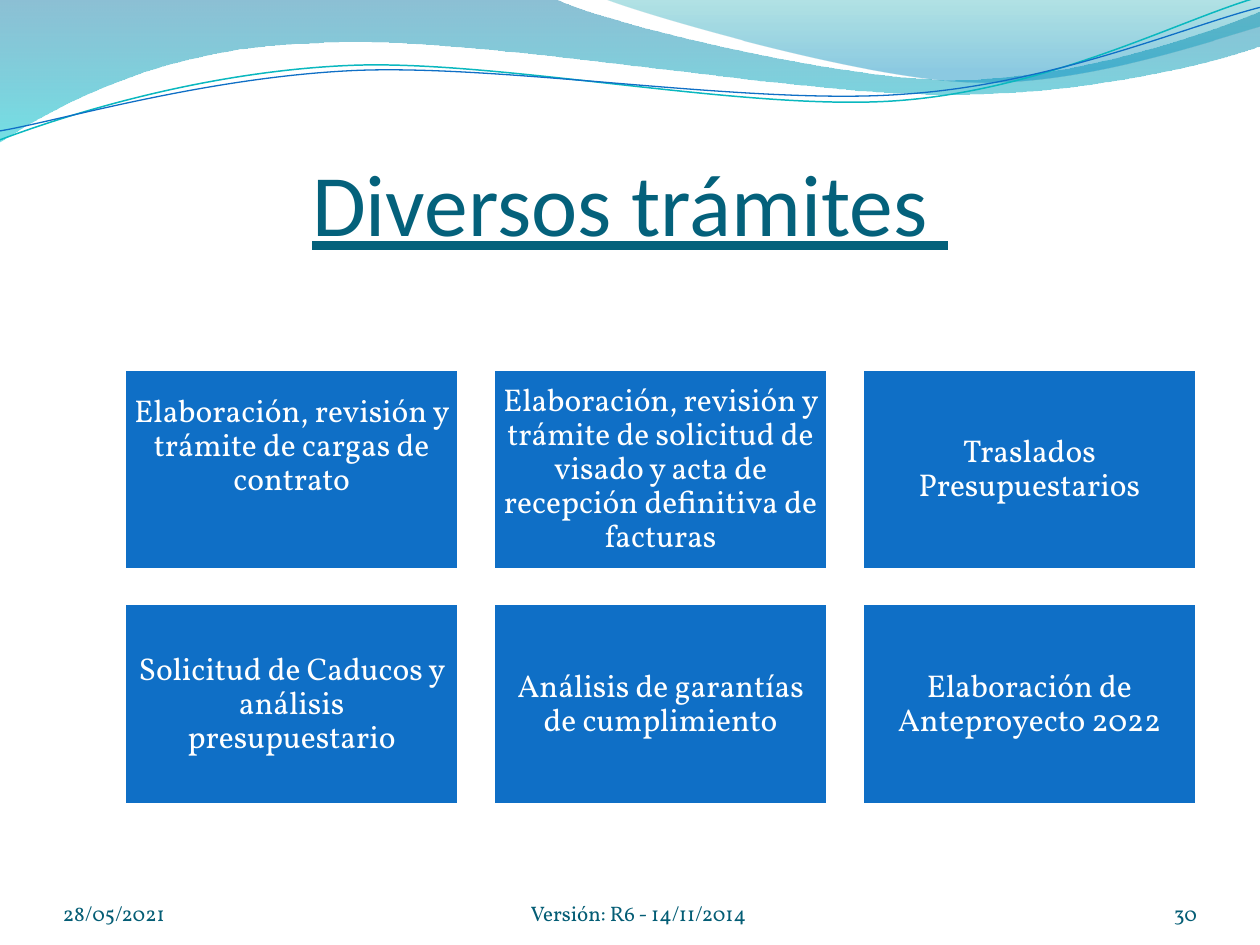
from dataclasses import dataclass

import lxml.etree
import pptx
import pptx.dml.color
import pptx.enum.shapes
import pptx.enum.text
import pptx.oxml.ns
import pptx.util

Cm, Pt, qn = pptx.util.Cm, pptx.util.Pt, pptx.oxml.ns.qn
ALIGN, ANCHOR = pptx.enum.text.PP_ALIGN, pptx.enum.text.MSO_ANCHOR


@dataclass(frozen=True)
class Theme:
    heading_font: str = "Calibri"
    body_font: str = "Vollkorn"
    title: str = "04617B"
    tile: str = "0F6FC6"
    tile_text: str = "FFFFFF"
    footer: str = "045D75"
    teal_line: str = "0AB8BF"
    # Gradient stops: position, colour, opacity in percent
    wide_wave: tuple = ((0, "0074A1", 45), (1, "00C6CF", 55))
    corner_wave: tuple = ((0, "00A1A9", 30), (0.8, "008BBF", 45))
    title_size: int = 50
    tile_size: int = 18
    footer_size: int = 12


THEME = Theme()

# Outlines in cm: pairs are points, sixes are Bézier curves
WIDE_WAVE = [
    (0, 0), (11.18, -0.03),
    (12.09, 0.43, 16.87, 1.6, 19.25, 1.6), (21.67, 1.6, 24.33, 0.66, 25.4, 0.23),
    (25.43, 0.91),
    (24.97, 1.12, 22.1, 1.93, 18.95, 1.9), (15.8, 1.9, 9.7, 0.71, 6.53, 0.86),
    (3.28, 0.91, 1.17, 2.11, -0.03, 2.87),
]
CORNER_WAVE = [
    (12.17, -0.03),
    (12.93, 0.28, 17.32, 1.57, 19.53, 1.65), (21.74, 1.75, 24.41, 0.81, 25.4, 0.53),
    (25.4, 0),
]
TEAL_CURVE = [
    (0, 2.82), (1.22, 2.36, 4.01, 1.45, 7.04, 1.32),
    (10.03, 1.19, 15.06, 2.26, 18.11, 2.03), (21.16, 1.8, 23.83, 0.38, 25.35, -0.05),
]
BLUE_CURVE = [
    (0, 2.64), (1.19, 2.44, 4.17, 1.55, 7.19, 1.42),
    (10.24, 1.3, 15.16, 2.13, 18.21, 1.9), (21.23, 1.7, 23.9, 0.53, 25.4, 0.15),
]

PROCEDURES = [
    "Elaboración, revisión y trámite de cargas de contrato",
    "Elaboración, revisión y trámite de solicitud de visado y acta de "
    "recepción definitiva de facturas",
    "Traslados Presupuestarios",
    "Solicitud de Caducos y análisis presupuestario",
    "Análisis de garantías de cumplimiento",
    "Elaboración de Anteproyecto 2022",
]


def rgb(colour):
    return pptx.dml.color.RGBColor.from_string(colour)


def write(frame, text, font, size, colour, align, anchor, insets):
    """Fill a text frame with one formatted run; insets are in cm."""
    frame.word_wrap = True
    frame.auto_size = pptx.enum.text.MSO_AUTO_SIZE.NONE
    frame.vertical_anchor = anchor
    (frame.margin_left, frame.margin_top,
     frame.margin_right, frame.margin_bottom) = map(Cm, insets)
    paragraph = frame.paragraphs[0]
    paragraph.alignment = align
    run = paragraph.add_run()
    run.text = text
    run.font.name, run.font.size = font, Pt(size)
    run.font.color.rgb = rgb(colour)
    return paragraph


def add_outline(slide, left, top, outline, close):
    """Draw an outline, joining each curve's three points into one Bézier."""
    start, *rest = [(Cm(left + x), Cm(top + y)) for piece in outline
                    for x, y in zip(piece[::2], piece[1::2])]
    builder = slide.shapes.build_freeform(*start)
    builder.add_line_segments(rest, close=close)
    shape = builder.convert_to_shape()
    shape.shadow.inherit = False
    segments = iter(list(shape._element.spPr.iter(qn("a:lnTo"))))
    for piece in outline[1:]:
        segment = next(segments)
        if len(piece) == 6:
            bezier = lxml.etree.Element(qn("a:cubicBezTo"))
            segment.addprevious(bezier)
            for line in (segment, next(segments), next(segments)):
                bezier.append(line[0])
                line.getparent().remove(line)
    return shape


def add_waves(slide, left, top):
    # Translucent areas
    for outline, stops in ((WIDE_WAVE, THEME.wide_wave), (CORNER_WAVE, THEME.corner_wave)):
        wave = add_outline(slide, left, top, outline, close=True)
        wave.line.fill.background()
        wave.fill.gradient()
        wave.fill.gradient_angle = 270
        for stop, (position, colour, _) in zip(wave.fill.gradient_stops, stops):
            stop.position = position
            stop.color.rgb = rgb(colour)
        for node, (_, _, opacity) in zip(wave._element.spPr.iter(qn("a:srgbClr")), stops):
            lxml.etree.SubElement(node, qn("a:alpha"), val=str(opacity * 1000))
    # Thin curves
    for outline, colour, width in ((TEAL_CURVE, THEME.teal_line, 0.85),
                                   (BLUE_CURVE, THEME.tile, 0.75)):
        curve = add_outline(slide, left, top, outline, close=False)
        curve.fill.background()
        curve.line.color.rgb = rgb(colour)
        curve.line.width = Pt(width)


def add_title(slide, left, top, width, height):
    title = slide.shapes.title
    title.left, title.top, title.width, title.height = map(Cm, (left, top, width, height))
    heading = write(title.text_frame, "Diversos trámites ", THEME.heading_font,
                    THEME.title_size, THEME.title, ALIGN.CENTER, ANCHOR.BOTTOM,
                    (0, 0.13, 0, 0))
    heading.runs[0].font.underline = True
    # Bring the title in front of the waves
    title._element.getparent().append(title._element)


def add_procedures(slide, left, top, width, height, columns=3, rows=2, gap=0.68):
    tile_width = (width - gap * (columns - 1)) / columns
    tile_height = (height - gap * (rows - 1)) / rows
    for index, procedure in enumerate(PROCEDURES):
        row, column = divmod(index, columns)
        tile = slide.shapes.add_shape(
            pptx.enum.shapes.MSO_SHAPE.RECTANGLE,
            Cm(left + column * (tile_width + gap)), Cm(top + row * (tile_height + gap)),
            Cm(tile_width), Cm(tile_height))
        tile.shadow.inherit = False
        tile.fill.solid()
        tile.fill.fore_color.rgb = rgb(THEME.tile)
        tile.line.color.rgb = rgb(THEME.tile_text)
        tile.line.width = Pt(2)
        # The first text sits above the middle of its tile
        bottom_inset = 1.1 if index == 0 else 0.18
        label = write(tile.text_frame, procedure, THEME.body_font, THEME.tile_size,
                      THEME.tile_text, ALIGN.CENTER, ANCHOR.MIDDLE,
                      (0.18, 0.18, 0.18, bottom_inset))
        label.line_spacing = 0.9


def add_footer(slide, left, top, height):
    for offset, width, text, align in (
            (0, 5.92, "28/05/2021", ALIGN.LEFT),
            (9.43, 6.02, "Versión: R6 - 14/11/2014", ALIGN.LEFT),
            (20.75, 2.11, "30", ALIGN.RIGHT)):
        note = slide.shapes.add_textbox(Cm(left + offset), Cm(top), Cm(width), Cm(height))
        write(note.text_frame, text, THEME.body_font, THEME.footer_size, THEME.footer,
              align, ANCHOR.BOTTOM, (0, 0, 0, 0))


def main():
    deck = pptx.Presentation()
    deck.slide_width, deck.slide_height = Cm(25.4), Cm(19.05)
    slide = deck.slides.add_slide(deck.slide_layouts[5])
    add_waves(slide, 0, 0)
    add_title(slide, 1.27, 1.96, 22.86, 3.17)
    add_procedures(slide, 2.5, 7.44, 21.63, 8.78)
    add_footer(slide, 1.27, 17.65, 1.02)
    deck.save("out.pptx")


if __name__ == "__main__":
    main()
